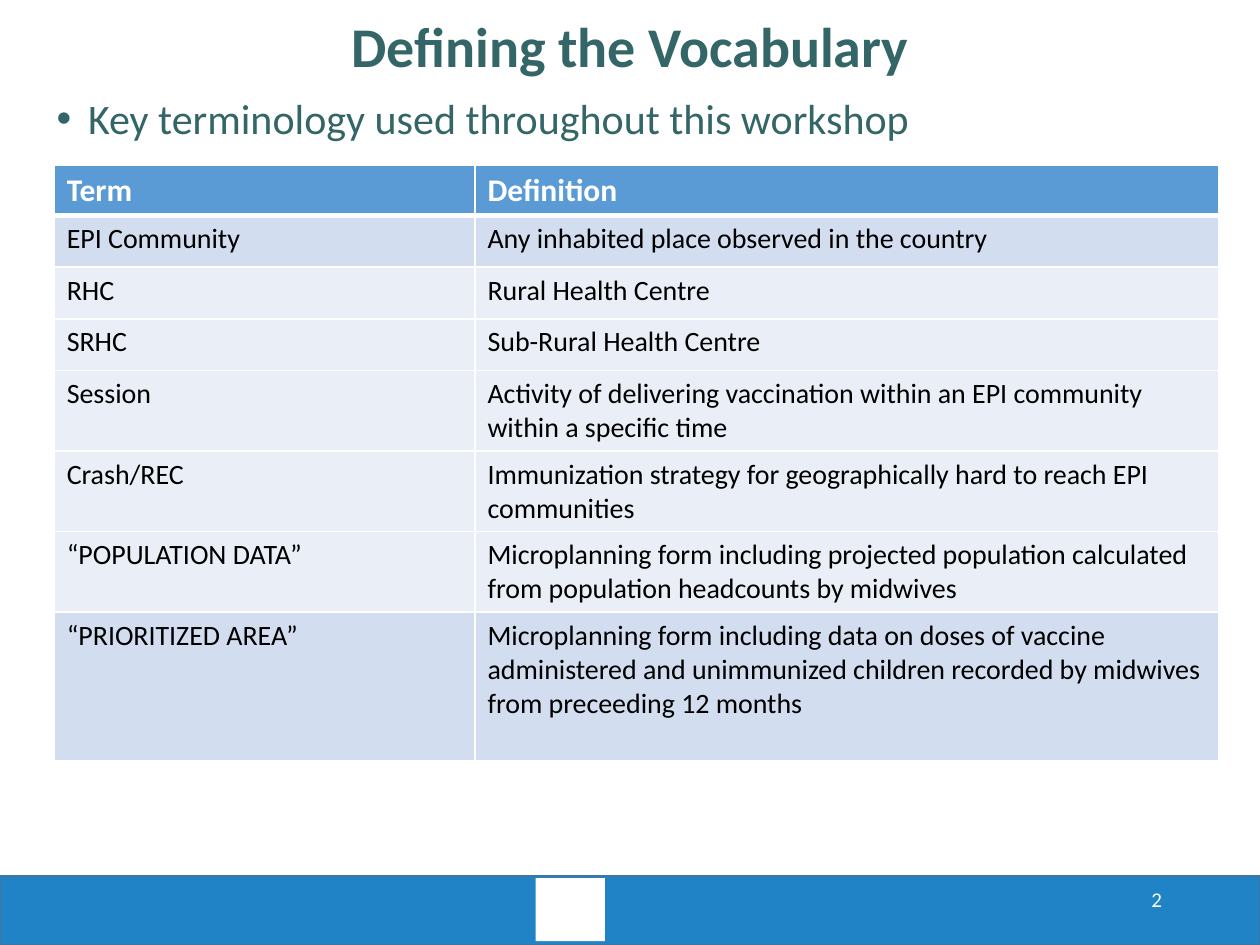
from lxml.etree import SubElement
from pptx import Presentation
from pptx.dml.color import RGBColor
from pptx.enum.shapes import MSO_SHAPE as SHAPE
from pptx.enum.text import MSO_ANCHOR as ANCHOR, PP_ALIGN as ALIGN
from pptx.oxml.ns import qn
from pptx.util import Inches, Pt

TEAL, WHITE, BLACK = "346667", "FFFFFF", "000000"
HEADER, TINT, PALE = "5B9BD5", "D2DEEF", "EAEFF7"


def rgb(value):
    return RGBColor.from_string(value)


def write(tf, text, color, **formats):
    """Fill the first paragraph with one Calibri run and return the paragraph."""
    tf.word_wrap = True
    p = tf.paragraphs[0]
    r = p.add_run()
    r.text = text
    r.font.color.rgb = rgb(color)
    for name, value in {"name": "Calibri", **formats}.items():
        setattr(r.font, name, value)
    return p


prs = Presentation()
prs.slide_width, prs.slide_height = Inches(10), Inches(7.5)
s = prs.slides.add_slide(prs.slide_layouts[6])

# Footer band with a plain square in place of the emblem
for box, fill, line in [
    ((0, 6.95, 10, 0.55), "1F83C5", "43739E"),
    ((4.25, 6.97, 0.55, 0.5), WHITE, None),
]:
    sp = s.shapes.add_shape(SHAPE.RECTANGLE, *map(Inches, box))
    sp.shadow.inherit = False
    sp.fill.solid()
    sp.fill.fore_color.rgb = rgb(fill)
    if line:
        sp.line.color.rgb = rgb(line)
        sp.line.width = Pt(1)
    else:
        sp.line.fill.background()

# Title, page number and bulleted lead-in
paragraphs = []
for box, text, color, size, bold, align, anchor in [
    ((0.69, 0.06, 8.62, 0.67), "Defining the Vocabulary", TEAL, 32, True, ALIGN.CENTER, ANCHOR.MIDDLE),
    ((7.07, 6.95, 2.25, 0.4), "2", WHITE, 12, False, ALIGN.RIGHT, ANCHOR.MIDDLE),
    ((0.35, 0.73, 9.81, 0.42), "Key terminology used throughout this workshop", TEAL, 24, False,
     ALIGN.LEFT, ANCHOR.TOP),
]:
    tf = s.shapes.add_textbox(*map(Inches, box)).text_frame
    tf.vertical_anchor = anchor
    p = write(tf, text, color, size=Pt(size), bold=bold)
    p.alignment = align
    p.line_spacing = 0.9
    paragraphs.append(p)

pPr = paragraphs[-1]._p.get_or_add_pPr()
pPr.set("marL", str(Inches(0.25)))
pPr.set("indent", str(-Inches(0.25)))
SubElement(pPr, qn("a:buFont"), typeface="Arial")
SubElement(pPr, qn("a:buChar"), char="•")

# Vocabulary table: height, fill, term, definition
rows = [
    (0.4, HEADER, "Term", "Definition"),
    (0.41, TINT, "EPI Community", "Any inhabited place observed in the country"),
    (0.41, PALE, "RHC", "Rural Health Centre"),
    (0.41, PALE, "SRHC", "Sub-Rural Health Centre"),
    (0.64, PALE, "Session",
     "Activity of delivering vaccination within an EPI community within a specific time"),
    (0.64, PALE, "Crash/REC",
     "Immunization strategy for geographically hard to reach EPI communities"),
    (0.64, PALE, "“POPULATION DATA”",
     "Microplanning form including projected population calculated from population headcounts by midwives"),
    (1.18, TINT, "“PRIORITIZED AREA”",
     "Microplanning form including data on doses of vaccine administered and unimmunized children "
     "recorded by midwives from preceeding 12 months"),
]
widths = [3.34, 5.9]
total_height = sum(row[0] for row in rows)
table = s.shapes.add_table(len(rows), len(widths), Inches(0.43), Inches(1.31),
                           Inches(sum(widths)), Inches(total_height)).table
for column, width in zip(table.columns, widths):
    column.width = Inches(width)

for i, (height, fill, *texts) in enumerate(rows):
    table.rows[i].height = Inches(height)
    header = i == 0
    for cell, text in zip(table.rows[i].cells, texts):
        write(cell.text_frame, text, WHITE if header else BLACK,
              size=Pt(18 if header else 16), bold=header)
        tcPr = cell._tc.get_or_add_tcPr()
        for side, weight in {"L": 1, "R": 1, "T": 3 if i == 1 else 1, "B": 3 if header else 1}.items():
            ln = SubElement(tcPr, qn(f"a:ln{side}"), w=str(Pt(weight)))
            SubElement(SubElement(ln, qn("a:solidFill")), qn("a:srgbClr"), val=WHITE)
        cell.fill.solid()
        cell.fill.fore_color.rgb = rgb(fill)

prs.save("out.pptx")
